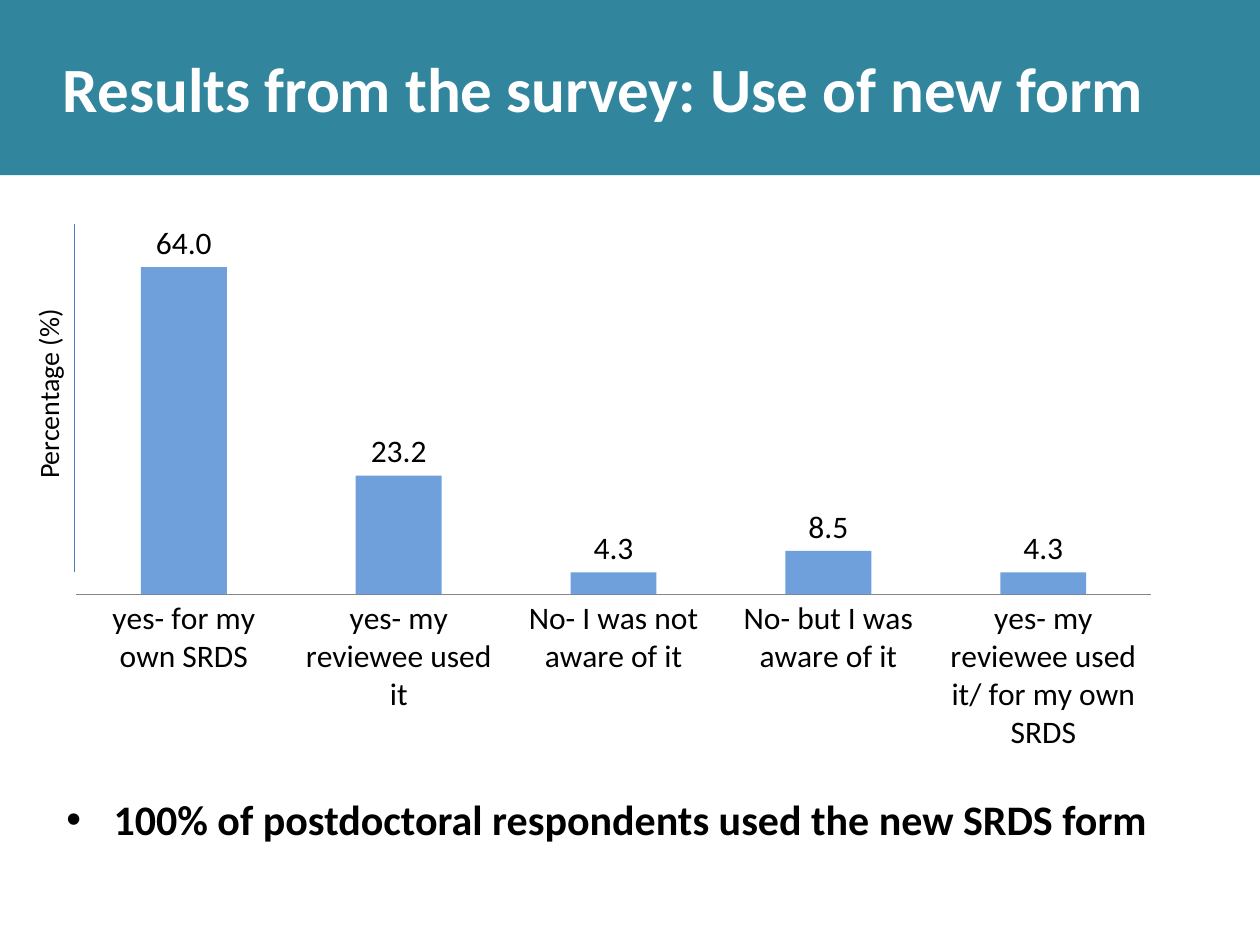
import pptx
import pptx.util
import pptx.chart.data
import pptx.dml.color
import pptx.enum.chart
import pptx.enum.shapes
import pptx.enum.text
import pptx.oxml
import pptx.oxml.ns

Cm = pptx.util.Cm
Pt = pptx.util.Pt
RGB = pptx.dml.color.RGBColor
TEAL = RGB(0x31, 0x85, 0x9C)
BLUE = RGB(0x55, 0x8E, 0xD5)
LINE = RGB(0x4B, 0x7E, 0xBC)
GREY = RGB(0x86, 0x86, 0x86)
BLACK = RGB(0, 0, 0)
WHITE = RGB(255, 255, 255)


def node(tag, **attrs):
    item = pptx.oxml.parse_xml(f"<{tag} {pptx.oxml.ns.nsdecls(tag.split(':')[0])}/>")
    for key, value in attrs.items():
        item.set(key, str(value))
    return item


class Deck:
    face = "Calibri"

    def __init__(self):
        self.file = pptx.Presentation()
        self.file.slide_width = Cm(25.4)
        self.file.slide_height = Cm(19.05)
        self.slide = self.file.slides.add_slide(self.file.slide_layouts[6])
        self.shapes = self.slide.shapes

    def style(self, font, size, color, bold=False):
        font.name = self.face
        font.size = Pt(size)
        font.bold = bold
        font.color.rgb = color

    def letter(self, shape, text, size, color, bold=False):
        shape.text_frame.text = text
        para = shape.text_frame.paragraphs[0]
        para.alignment = pptx.enum.text.PP_ALIGN.LEFT
        self.style(para.runs[0].font, size, color, bold)
        return para

    def banner(self, text, box):
        shape = self.shapes.add_shape(
            pptx.enum.shapes.MSO_SHAPE.RECTANGLE, *map(Cm, box))
        shape.shadow.inherit = False
        shape.fill.solid()
        shape.fill.fore_color.rgb = TEAL
        shape.line.fill.background()
        shape.text_frame.vertical_anchor = pptx.enum.text.MSO_ANCHOR.MIDDLE
        para = self.letter(shape, text, 36, WHITE, True)
        para._p.get_or_add_pPr().set("marL", str(Cm(1.02)))

    def bullet(self, text, box):
        shape = self.shapes.add_textbox(*map(Cm, box))
        shape.text_frame.word_wrap = True
        props = self.letter(shape, text, 24, BLACK, True)._p.get_or_add_pPr()
        props.set("marL", str(Cm(0.95)))
        props.set("indent", str(-Cm(0.95)))
        props.append(node("a:buFont", typeface="Arial"))
        props.append(node("a:buChar", char="•"))

    def label(self, text, box):
        shape = self.shapes.add_textbox(*map(Cm, box))
        shape.rotation = 270
        shape.text_frame.word_wrap = False
        shape.text_frame.auto_size = pptx.enum.text.MSO_AUTO_SIZE.SHAPE_TO_FIT_TEXT
        self.letter(shape, text, 16, BLACK)

    def rule(self, *ends):
        line = self.shapes.add_connector(
            pptx.enum.shapes.MSO_CONNECTOR.STRAIGHT, *map(Cm, ends))
        line.line.color.rgb = LINE
        line.line.width = Pt(0.75)
        line._element.spPr.append(node("a:effectLst"))

    def chart(self, rows, box):
        data = pptx.chart.data.CategoryChartData()
        data.categories = [name for name, _ in rows]
        data.add_series("Series 1", [value for _, value in rows])
        chart = self.shapes.add_chart(
            pptx.enum.chart.XL_CHART_TYPE.COLUMN_CLUSTERED,
            *map(Cm, box), data).chart
        chart.has_legend = False
        chart.has_title = False
        self.style(chart.font, 18, BLACK)

        axis = chart.category_axis
        axis.major_tick_mark = pptx.enum.chart.XL_TICK_MARK.NONE
        axis.format.line.color.rgb = GREY
        axis.format.line.width = Pt(0.75)
        scale = chart.value_axis
        scale.minimum_scale = 0
        scale.maximum_scale = 70
        scale.has_major_gridlines = False
        scale.tick_labels.number_format = "0.00"
        scale.tick_labels.number_format_is_linked = False
        scale.visible = False

        plot = chart.plots[0]
        plot.gap_width = 150
        plot.overlap = -25
        plot.vary_by_categories = False
        plot.has_data_labels = True
        labels = plot.data_labels
        labels.show_value = True
        labels.number_format = "#,##0.0"
        labels.number_format_is_linked = False
        labels.position = pptx.enum.chart.XL_LABEL_POSITION.OUTSIDE_END
        self.style(labels.font, 18, BLACK)

        fill = plot.series[0].format.fill
        fill.solid()
        fill.fore_color.rgb = BLUE
        tint = plot.series[0]._element.spPr.find(".//" + pptx.oxml.ns.qn("a:srgbClr"))
        tint.append(node("a:alpha", val=84000))
        self.place(chart, x=0.02, y=0.02, w=0.96, h=0.67)

    def place(self, chart, **parts):
        area = chart._chartSpace.chart.plotArea
        for old in area.findall(pptx.oxml.ns.qn("c:layout")):
            area.remove(old)
        frame = node("c:manualLayout")
        frame.append(node("c:layoutTarget", val="inner"))
        for key in "xy":
            frame.append(node(f"c:{key}Mode", val="edge"))
        for key, value in parts.items():
            frame.append(node(f"c:{key}", val=value))
        layout = node("c:layout")
        layout.append(frame)
        area.insert(0, layout)


def main():
    deck = Deck()
    deck.banner("Results from the survey: Use of new form", (0, 0, 25.4, 3.53))
    deck.bullet("100% of postdoctoral respondents used the new SRDS form",
                (1.09, 15.88, 23.24, 1.3))
    deck.chart([
        ("yes- for my own SRDS", 64),
        ("yes- my reviewee used it", 23.2),
        ("No- I was not aware of it", 4.3),
        ("No- but I was aware of it", 8.5),
        ("yes- my reviewee used it/ for my own SRDS", 4.3),
    ], (1.09, 4.52, 22.56, 10.8))
    deck.rule(1.5, 11.53, 1.5, 4.52)
    deck.label("Percentage (%)", (-1.02, 7.44, 3.99, 0.94))
    deck.file.save("out.pptx")


if __name__ == "__main__":
    main()
